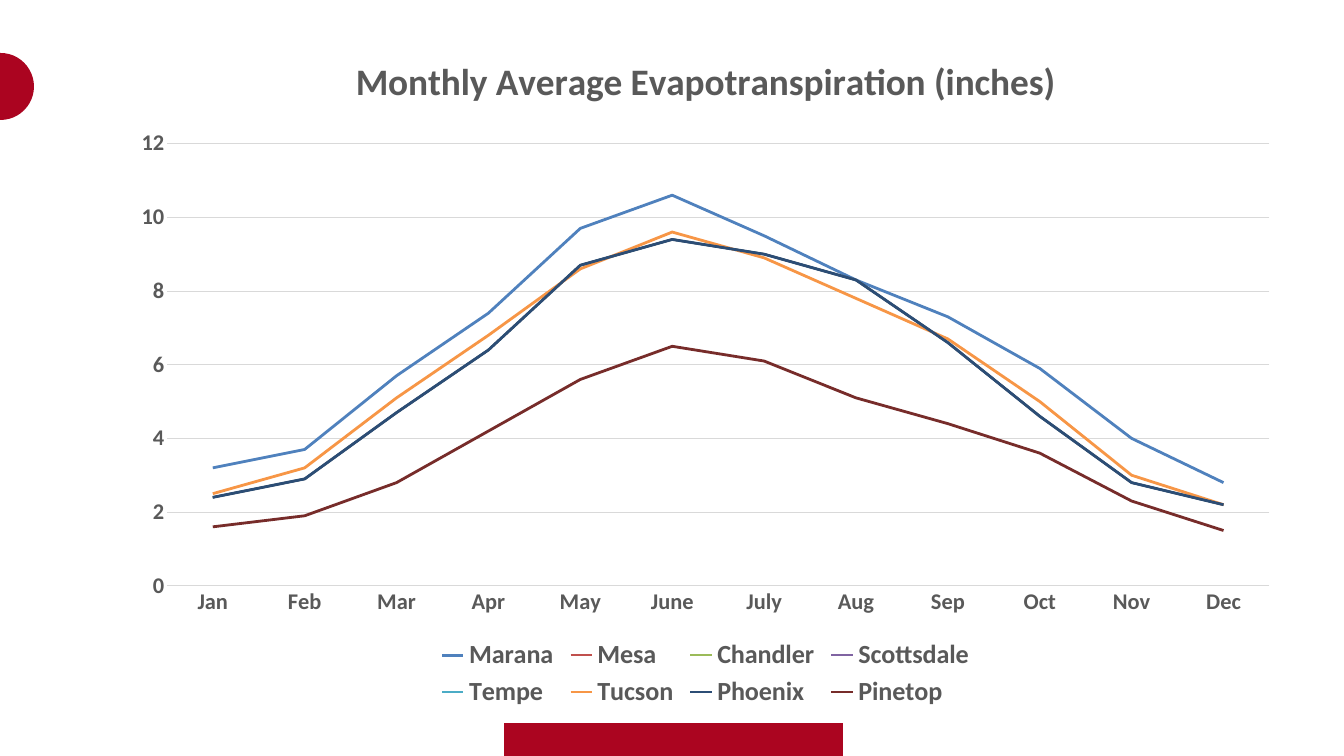
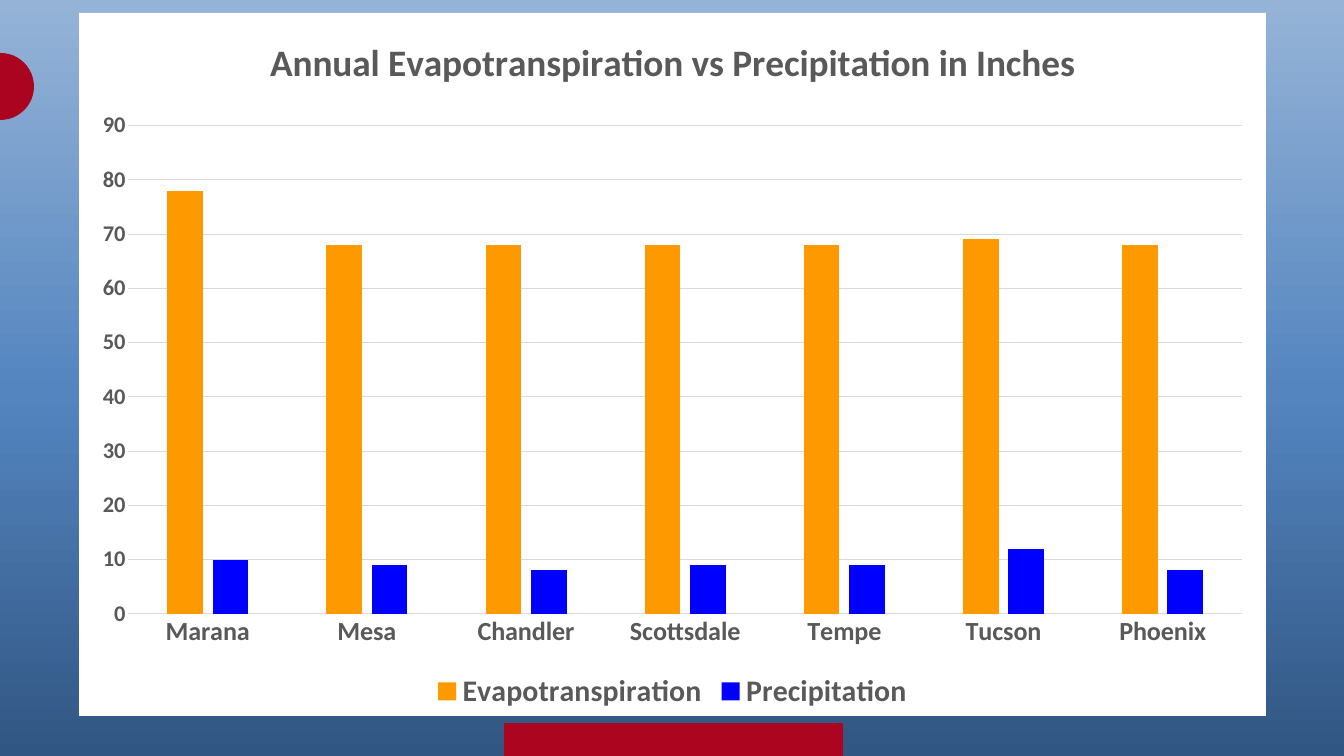
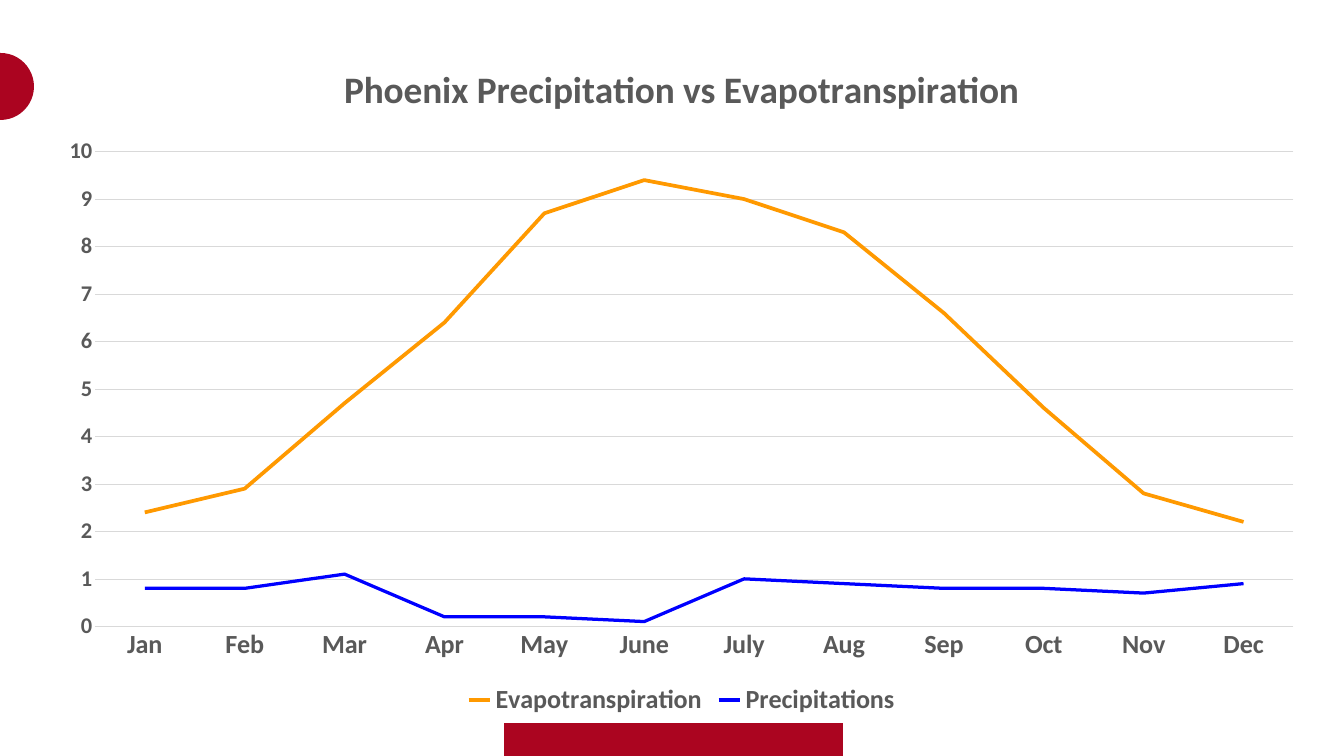
from copy import deepcopy

from pptx import Presentation
from pptx.chart.data import CategoryChartData
from pptx.dml.color import RGBColor
from pptx.enum.chart import XL_CHART_TYPE, XL_LEGEND_POSITION, XL_TICK_MARK
from pptx.enum.shapes import MSO_SHAPE
from pptx.oxml import parse_xml
from pptx.oxml.ns import nsdecls, qn
from pptx.util import Pt

LINE, COLUMN = XL_CHART_TYPE.LINE, XL_CHART_TYPE.COLUMN_CLUSTERED
BOTTOM, NO_TICK = XL_LEGEND_POSITION.BOTTOM, XL_TICK_MARK.NONE
RECTANGLE, OVAL = MSO_SHAPE.RECTANGLE, MSO_SHAPE.OVAL

PX = 914400 / 67.2
SLIDE_SIZE = 1344, 756
FONT = "Calibri"
TITLE_SIZE, VALUE_SIZE = 40, 24

WHITE = RGBColor(0xFF, 0xFF, 0xFF)
GRAY = RGBColor(0x59, 0x59, 0x59)
GRID = RGBColor(0xD9, 0xD9, 0xD9)
RED = RGBColor(0xAB, 0x05, 0x20)
DARK_RED = RGBColor(0xAB, 0x04, 0x20)
ORANGE = RGBColor(0xFF, 0x99, 0x00)
PURE_BLUE = RGBColor(0x00, 0x00, 0xFF)
BLUE = RGBColor(0x4F, 0x81, 0xBD)
BRICK = RGBColor(0xC0, 0x50, 0x4D)
GREEN = RGBColor(0x9B, 0xBB, 0x59)
PURPLE = RGBColor(0x80, 0x64, 0xA2)
TEAL = RGBColor(0x4B, 0xAC, 0xC6)
APRICOT = RGBColor(0xF7, 0x96, 0x46)
NAVY = RGBColor(0x2C, 0x4D, 0x75)
MAROON = RGBColor(0x77, 0x2C, 0x2A)
SKY = [
    (0, RGBColor(0x31, 0x56, 0x83)),
    (0.48, RGBColor(0x54, 0x85, 0xBF)),
    (1, RGBColor(0x95, 0xB3, 0xD7)),
]

MASTER_MARKS = [
    (RECTANGLE, (504, 723, 339, 36), RED),
    (OVAL, (-33, 53, 67, 67), DARK_RED),
]

MONTHS = ["Jan", "Feb", "Mar", "Apr", "May", "June",
          "July", "Aug", "Sep", "Oct", "Nov", "Dec"]
CITIES = ["Marana", "Mesa", "Chandler", "Scottsdale", "Tempe", "Tucson", "Phoenix"]
PHOENIX_AREA = [2.4, 2.9, 4.7, 6.4, 8.7, 9.4, 9, 8.3, 6.6, 4.6, 2.8, 2.2]

# Each series: name, values, colour, line width in points (None for columns)
SLIDES = [
    {
        "title": "Monthly Average Evapotranspiration (inches)",
        "kind": LINE, "box": (118, 32, 1175, 681), "background": None,
        "categories": MONTHS, "category_size": 24, "legend_size": 28,
        "scale": (12, 2),
        "series": [
            ("Marana", [3.2, 3.7, 5.7, 7.4, 9.7, 10.6, 9.5, 8.3, 7.3, 5.9, 4, 2.8], BLUE, 3),
            ("Mesa", PHOENIX_AREA, BRICK, 2.25),
            ("Chandler", PHOENIX_AREA, GREEN, 2.25),
            ("Scottsdale", PHOENIX_AREA, PURPLE, 2.25),
            ("Tempe", PHOENIX_AREA, TEAL, 2.25),
            ("Tucson", [2.5, 3.2, 5.1, 6.8, 8.6, 9.6, 8.9, 7.8, 6.7, 5, 3, 2.2], APRICOT, 3),
            ("Phoenix", PHOENIX_AREA, NAVY, 3),
            ("Pinetop", [1.6, 1.9, 2.8, 4.2, 5.6, 6.5, 6.1, 5.1, 4.4, 3.6, 2.3, 1.5], MAROON, 3),
        ],
    },
    {
        "title": "Annual Evapotranspiration vs Precipitation in Inches",
        "kind": COLUMN, "box": (79, 13, 1187, 703), "background": SKY,
        "categories": CITIES, "category_size": 28, "legend_size": 32,
        "scale": (90, 10),
        "series": [
            ("Evapotranspiration", [78, 68, 68, 68, 68, 69, 68], ORANGE, None),
            ("Precipitation", [10, 9, 8, 9, 9, 12, 8], PURE_BLUE, None),
        ],
    },
    {
        "title": "Phoenix Precipitation vs Evapotranspiration",
        "kind": LINE, "box": (44, 40, 1275, 681), "background": None,
        "categories": MONTHS, "category_size": 28, "legend_size": 28,
        "scale": (10, 1),
        "series": [
            ("Evapotranspiration", PHOENIX_AREA, ORANGE, 4),
            ("Precipitations",
             [0.8, 0.8, 1.1, 0.2, 0.2, 0.1, 1, 0.9, 0.8, 0.8, 0.7, 0.9], PURE_BLUE, 3.5),
        ],
    },
]


def emu(lengths):
    return [round(length * PX) for length in lengths]


def set_all(target, **values):
    for name, value in values.items():
        setattr(target, name, value)


def style_font(font, size):
    set_all(font, name=FONT, size=Pt(size), bold=True)
    font.color.rgb = GRAY


def style_line(line, color, width):
    line.color.rgb = color
    line.width = Pt(width)


def paint_background(slide, stops):
    fill = slide.background.fill
    if stops is None:
        fill.solid()
        fill.fore_color.rgb = WHITE
        return
    fill.gradient()
    fill.gradient_angle = 90
    stop_list = slide.element.find(".//" + qn("a:gsLst"))
    while len(stop_list) < len(stops):
        stop_list.append(deepcopy(stop_list[0]))
    for stop, (position, color) in zip(fill.gradient_stops, stops):
        stop.position = position
        stop.color.rgb = color


def add_master_marks(slide):
    for preset, box, color in MASTER_MARKS:
        mark = slide.shapes.add_shape(preset, *emu(box))
        mark.shadow.inherit = False
        mark.fill.solid()
        mark.fill.fore_color.rgb = color
        mark.line.fill.background()


def fill_chart_area(chart, color):
    chart.element.find(qn("c:chart")).addnext(parse_xml(
        f'<c:spPr {nsdecls("c", "a")}><a:solidFill><a:srgbClr val="{color}"/></a:solidFill>'
        "<a:ln><a:noFill/></a:ln></c:spPr>"))


def style_axes(chart, category_size, scale):
    categories, values = chart.category_axis, chart.value_axis
    for axis, size in ((categories, category_size), (values, VALUE_SIZE)):
        set_all(axis, major_tick_mark=NO_TICK, minor_tick_mark=NO_TICK)
        style_font(axis.tick_labels.font, size)
    style_line(categories.format.line, GRID, 0.75)
    values.format.line.fill.background()
    style_line(values.major_gridlines.format.line, GRID, 0.75)
    maximum, step = scale
    set_all(values, minimum_scale=0, maximum_scale=maximum, major_unit=step)


def style_series(chart, series_content):
    plot = chart.plots[0]
    plot.vary_by_categories = False
    for series, (_, _, color, width) in zip(plot.series, series_content):
        if width is None:
            series.format.fill.solid()
            series.format.fill.fore_color.rgb = color
        else:
            series.smooth = False
            style_line(series.format.line, color, width)


def add_climate_chart(slide, content):
    data = CategoryChartData()
    data.categories = content["categories"]
    for name, values, *_ in content["series"]:
        data.add_series(name, values)
    chart = slide.shapes.add_chart(content["kind"], *emu(content["box"]), data).chart
    set_all(chart.font, name=FONT, size=Pt(10))
    fill_chart_area(chart, WHITE)

    title = chart.chart_title
    title.include_in_layout = False
    title.text_frame.text = content["title"]
    style_font(title.text_frame.paragraphs[0].runs[0].font, TITLE_SIZE)

    chart.has_legend = True
    set_all(chart.legend, position=BOTTOM, include_in_layout=False)
    style_font(chart.legend.font, content["legend_size"])

    style_axes(chart, content["category_size"], content["scale"])
    style_series(chart, content["series"])
    if content["kind"] == COLUMN:
        set_all(chart.plots[0], gap_width=219, overlap=-27)


def main():
    deck = Presentation()
    deck.slide_width, deck.slide_height = emu(SLIDE_SIZE)
    for content in SLIDES:
        slide = deck.slides.add_slide(deck.slide_layouts[6])
        paint_background(slide, content["background"])
        add_master_marks(slide)
        add_climate_chart(slide, content)
    deck.save("out.pptx")


if __name__ == "__main__":
    main()
